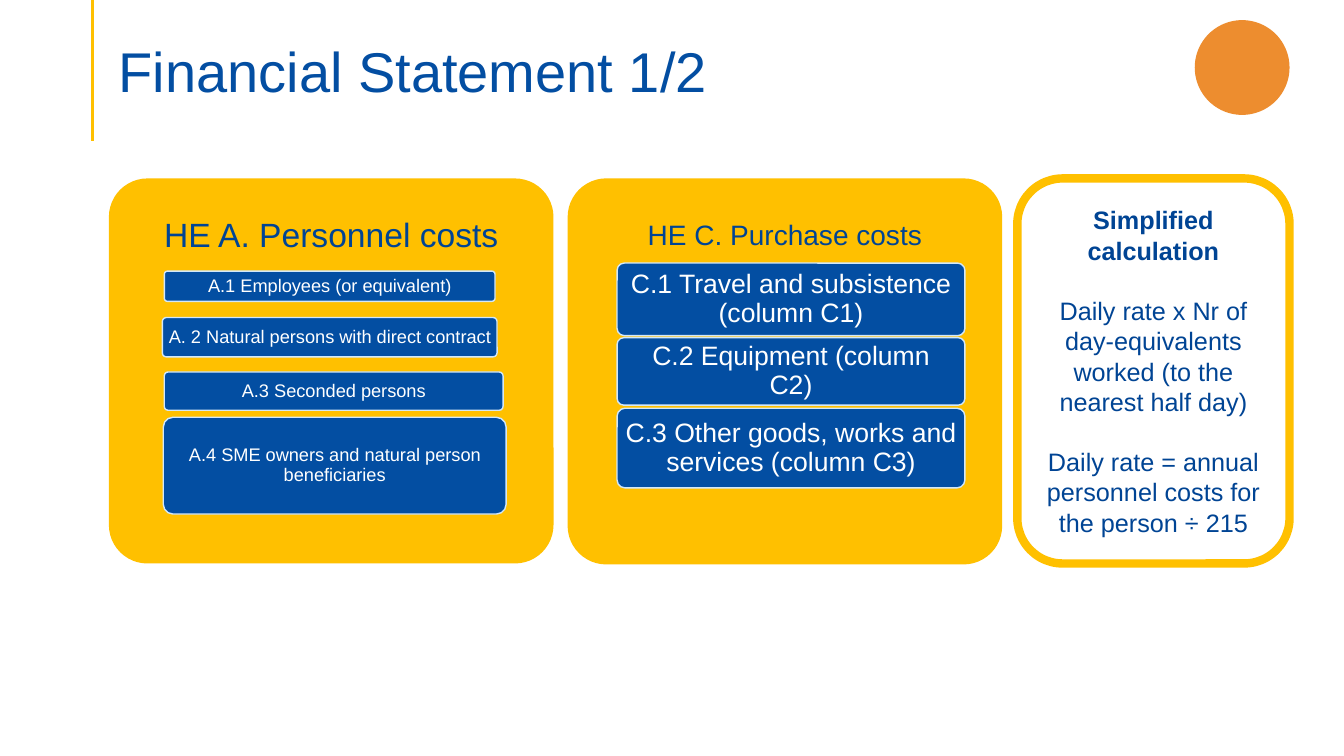
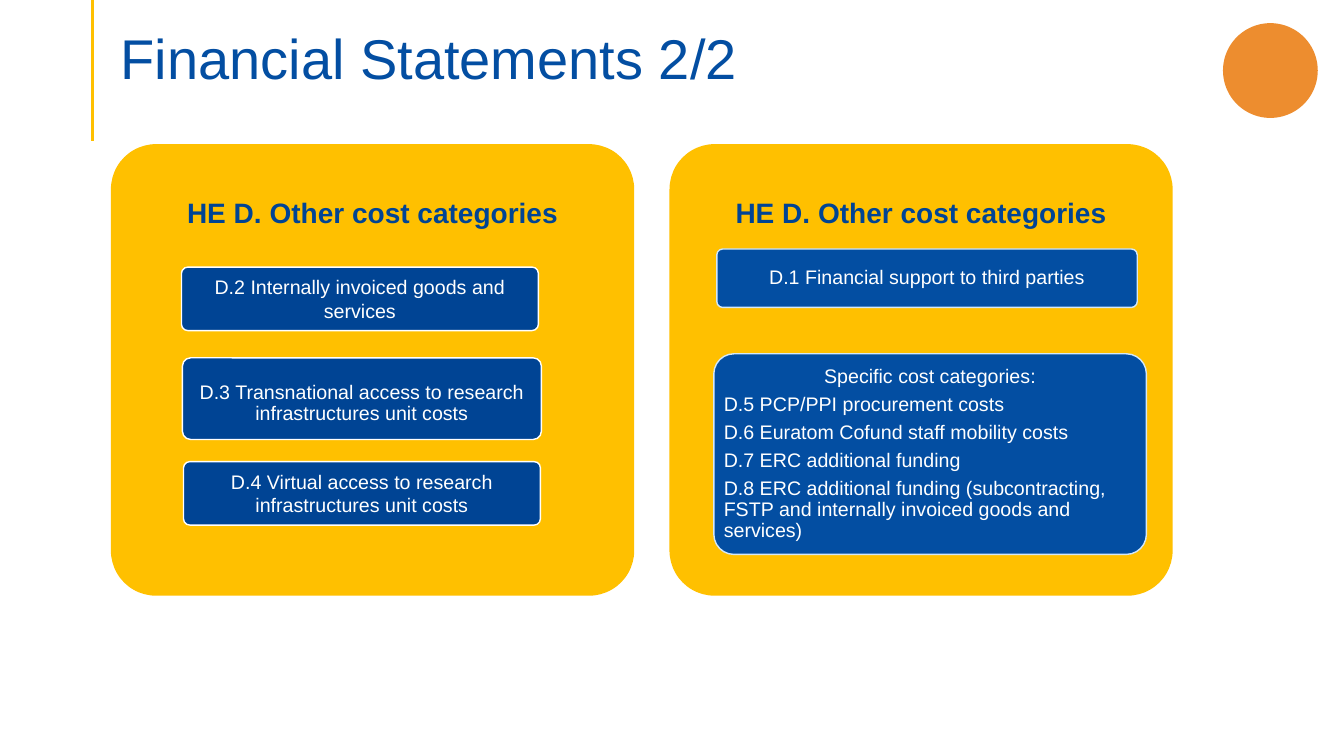
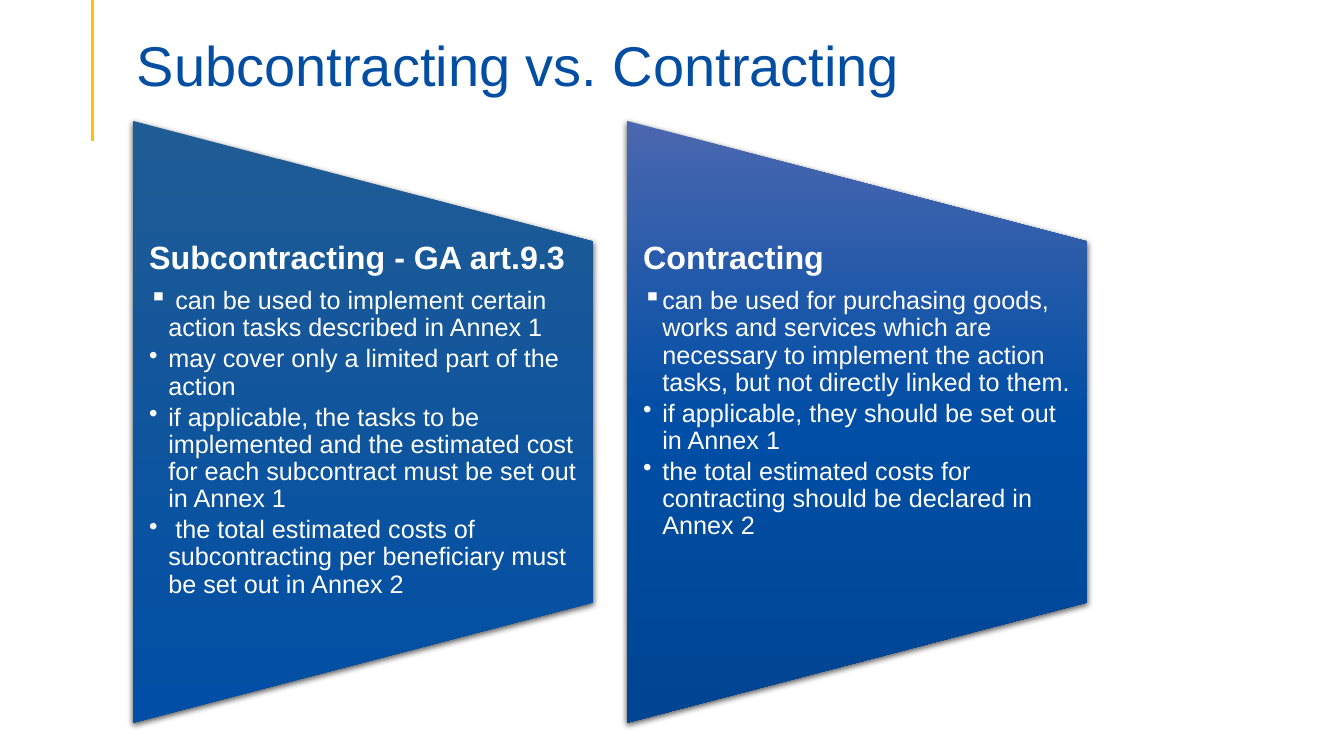
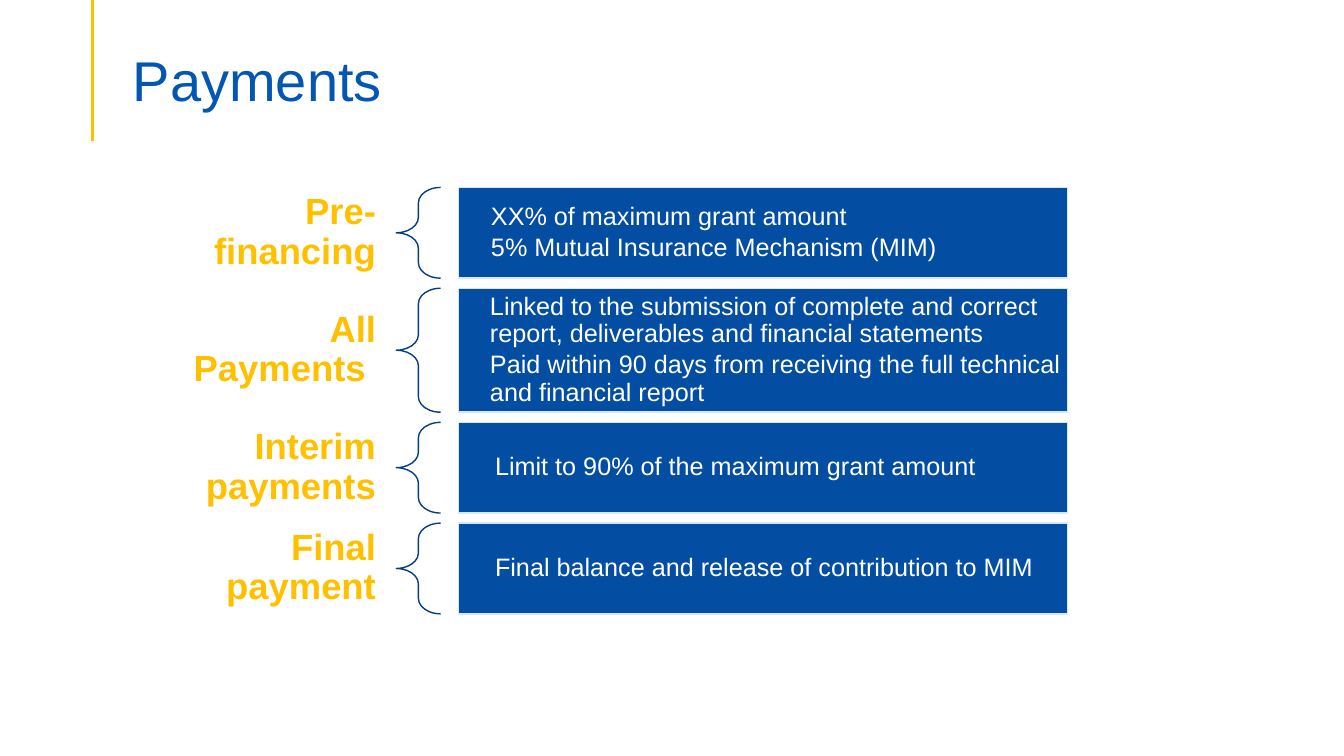
"""Build four slides on cost categories, subcontracting and payments."""
from lxml.etree import SubElement
from pptx import Presentation
from pptx.dml.color import RGBColor
from pptx.enum.shapes import MSO_CONNECTOR, MSO_SHAPE
from pptx.enum.text import MSO_ANCHOR, PP_ALIGN
from pptx.oxml.ns import qn
from pptx.util import Inches, Pt

BLUE = RGBColor(0x03, 0x4E, 0xA2)
DEEP_BLUE = RGBColor(0x00, 0x44, 0x94)
PAYMENT_BLUE = RGBColor(0x03, 0x56, 0xB1)
BRACE_BLUE = RGBColor(0x02, 0x3E, 0x82)
PALE_BLUE = RGBColor(0xD3, 0xE8, 0xF9)
STEEL = RGBColor(0x1F, 0x5C, 0x95)
PERIWINKLE = RGBColor(0x4B, 0x67, 0xAF)
MID_BLUE = RGBColor(0x00, 0x4E, 0xA5)
NIGHT_BLUE = RGBColor(0x00, 0x45, 0x93)
GOLD = RGBColor(0xFF, 0xC0, 0x00)
ORANGE = RGBColor(0xED, 0x8D, 0x2F)
WHITE = RGBColor(0xFF, 0xFF, 0xFF)
BLACK = RGBColor(0, 0, 0)


def write(frame, paragraphs, anchor=MSO_ANCHOR.MIDDLE, margins=(0.1, 0.05, 0.1, 0.05), **shared):
    frame.word_wrap = True
    frame.vertical_anchor = anchor
    frame.margin_left, frame.margin_top, frame.margin_right, frame.margin_bottom = map(Inches, margins)
    for index, entry in enumerate(paragraphs):
        text, own = (entry, {}) if isinstance(entry, str) else entry
        look = {"size": 18, "color": WHITE, "bold": False, "align": PP_ALIGN.LEFT, "spacing": 0.9,
                "before": 0, "after": 0, "indent": 0, "bullet": None, **shared, **own}
        paragraph = frame.add_paragraph() if index else frame.paragraphs[0]
        properties = paragraph._p.get_or_add_pPr()
        if look["indent"]:
            properties.set("marL", str(Inches(look["indent"])))
        if look["bullet"]:
            properties.set("indent", str(-Inches(look["indent"])))
            SubElement(properties, qn("a:buChar"), char=look["bullet"])
        paragraph.alignment = look["align"]
        paragraph.line_spacing = look["spacing"]
        paragraph.space_before = Pt(look["before"] if index else 0)
        paragraph.space_after = Pt(look["after"])
        run = paragraph.add_run()
        run.text = text
        run.font.name = "Arial"
        run.font.size = Pt(look["size"])
        run.font.bold = look["bold"]
        run.font.color.rgb = look["color"]


class Deck:
    def __init__(self):
        self.presentation = Presentation()
        self.presentation.slide_width = Inches(13.33)
        self.presentation.slide_height = Inches(7.5)
        self.slide = None

    def start(self, title, at, color=BLUE, anchor=MSO_ANCHOR.MIDDLE):
        self.slide = self.presentation.slides.add_slide(self.presentation.slide_layouts[6])
        accent = self.slide.shapes.add_connector(
            MSO_CONNECTOR.STRAIGHT, Inches(0.92), 0, Inches(0.92), Inches(1.4))
        accent.line.color.rgb = GOLD
        accent.line.width = Pt(2.25)
        SubElement(accent._element.spPr, qn("a:effectLst"))
        self.text(at, [title], size=40, color=color, anchor=anchor, margins=(0.1, 0.05, 0.1, 0))

    def text(self, at, paragraphs, **look):
        write(self.slide.shapes.add_textbox(*map(Inches, at)).text_frame, paragraphs, **look)

    def shape(self, kind, at, fill=None, line=None, width=1, adjust=None):
        shape = self.slide.shapes.add_shape(kind, *map(Inches, at))
        shape.shadow.inherit = False
        if fill is None:
            shape.fill.background()
        else:
            shape.fill.solid()
            shape.fill.fore_color.rgb = fill
        if line is None:
            shape.line.fill.background()
        else:
            shape.line.color.rgb = line
            shape.line.width = Pt(width)
        if adjust is not None:
            shape.adjustments[0] = adjust
        return shape

    def emblem(self, left, top):
        self.shape(MSO_SHAPE.OVAL, (left, top, 0.94, 0.94), ORANGE)

    def panel(self, at, heading, heading_height, **look):
        self.shape(MSO_SHAPE.ROUNDED_RECTANGLE, at, GOLD, adjust=0.1)
        left, top, width, _ = at
        self.text((left, top, width, heading_height), [heading],
                  color=DEEP_BLUE, align=PP_ALIGN.CENTER, **look)

    def card(self, at, paragraphs, fill=BLUE, line=PALE_BLUE, **look):
        card = self.shape(MSO_SHAPE.ROUNDED_RECTANGLE, at, fill, line, adjust=0.1)
        look = {"margins": (0.04, 0.03, 0.04, 0.03), "align": PP_ALIGN.CENTER, **look}
        write(card.text_frame, paragraphs, **look)

    def callout(self, at, paragraphs, **look):
        callout = self.shape(MSO_SHAPE.ROUNDED_RECTANGLE, at, WHITE, GOLD, 6)
        write(callout.text_frame, paragraphs, align=PP_ALIGN.CENTER, color=DEEP_BLUE, **look)

    def trapezoid(self, left, stops, heading, points):
        top, width, height = 1.2, 4.56, 5.97
        turned = (left + (width - height) / 2, top + (height - width) / 2, height, width)
        trapezoid = self.shape(MSO_SHAPE.FLOWCHART_MANUAL_OPERATION, turned, BLUE)
        trapezoid.rotation = 270
        properties = trapezoid._element.spPr
        solid = properties.find(qn("a:solidFill"))
        gradient = SubElement(properties, qn("a:gradFill"), rotWithShape="0")
        stop_list = SubElement(gradient, qn("a:gsLst"))
        for position, color in stops:
            stop = SubElement(stop_list, qn("a:gs"), pos=str(position * 1000))
            SubElement(stop, qn("a:srgbClr"), val=str(color))
        SubElement(gradient, qn("a:lin"), ang="5400000", scaled="0")
        properties.replace(solid, gradient)
        shadow = SubElement(properties.find(qn("a:effectLst")), qn("a:outerShdw"), blurRad=str(Pt(4.5)),
                            dist=str(Pt(1.5)), dir="5400000", rotWithShape="0")
        shade = SubElement(shadow, qn("a:srgbClr"), val=str(BLACK))
        SubElement(shade, qn("a:alpha"), val="63000")
        bullets = [(point, {"bullet": "•" if index else "▪"}) for index, point in enumerate(points)]
        title = (heading, {"size": 23, "bold": True, "after": 8, "indent": 0})
        self.text((left, 2.4, width, 3.58), [title, *bullets], anchor=MSO_ANCHOR.TOP,
                  margins=(0.16, 0, 0.16, 0), indent=0.19, after=2.7)

    def payment(self, top, height, label, details, indent):
        self.text((1.71, top, 2.22, height), [label], size=26, bold=True, color=GOLD,
                  align=PP_ALIGN.RIGHT, margins=(0.2, 0.07, 0.2, 0.07))
        self.shape(MSO_SHAPE.LEFT_BRACE, (3.93, top, 0.44, height), line=BRACE_BLUE, adjust=0.35)
        box = self.shape(MSO_SHAPE.RECTANGLE, (4.55, top, 6.04, height), BLUE, PALE_BLUE)
        write(box.text_frame, details, margins=(0.07,) * 4, indent=indent, after=2.7)


def personnel_and_purchases(deck):
    deck.start("Financial Statement 1/2", (1.08, 0.07, 11.5, 0.97), anchor=MSO_ANCHOR.BOTTOM)
    deck.emblem(11.85, 0.2)
    deck.callout((10.09, 1.77, 2.7, 3.82), [
        ("Simplified calculation", {"bold": True}),
        "Daily rate x Nr of day-equivalents worked (to the nearest half day)",
        "Daily rate = annual personnel costs for the person ÷ 215",
    ], spacing=1.0, before=21.5)
    deck.panel((1.08, 1.77, 4.41, 3.82), "HE A. Personnel costs", 1.15, size=24)
    for at, personnel in (
        ((1.63, 2.69, 3.28, 0.3), "A.1 Employees (or equivalent)"),
        ((1.61, 3.15, 3.32, 0.39), "A. 2 Natural persons with direct contract"),
        ((1.63, 3.69, 3.36, 0.38), "A.3 Seconded persons"),
        ((1.62, 4.14, 3.4, 0.96), "A.4 SME owners and natural person beneficiaries"),
    ):
        deck.card(at, [personnel], size=13)
    deck.panel((5.63, 1.77, 4.31, 3.83), "HE C. Purchase costs", 1.15, size=20)
    for top, height, side, purchase in (
        (2.61, 0.72, 0.05, "C.1 Travel and subsistence (column C1)"),
        (3.35, 0.67, 0.15, "C.2 Equipment (column C2)"),
        (4.05, 0.79, 0.05, "C.3 Other goods, works and services (column C3)"),
    ):
        deck.card((6.12, top, 3.45, height), [purchase], size=19, margins=(side, 0.04, side, 0.04))


def other_costs(deck):
    deck.start("Financial Statements 2/2", (1.1, 0.05, 11.5, 0.86), anchor=MSO_ANCHOR.BOTTOM)
    deck.emblem(12.13, 0.23)
    for left, width in ((1.1, 5.19), (6.64, 4.99)):
        deck.panel((left, 1.43, width, 4.48), "HE D. Other cost categories", 1.4, size=20, bold=True)
    for at, category, spacing, margins in (
        ((1.8, 2.65, 3.54, 0.63), "D.2 Internally invoiced goods and services", 1.0, (0.1, 0.05, 0.1, 0.05)),
        ((1.81, 3.55, 3.56, 0.81), "D.3 Transnational access to research infrastructures unit costs",
         0.9, (0.08, 0.13, 0.08, 0.03)),
        ((1.82, 4.58, 3.54, 0.63), "D.4 Virtual access to research infrastructures unit costs",
         1.0, (0.1, 0.05, 0.1, 0.05)),
    ):
        deck.card(at, [category], DEEP_BLUE, WHITE, size=14, spacing=spacing, margins=margins)
    deck.card((7.11, 2.47, 4.17, 0.58), ["D.1 Financial support to third parties"], size=14)
    deck.card((7.08, 3.51, 4.29, 1.99), [
        ("Specific cost categories:", {"align": PP_ALIGN.CENTER}),
        "D.5 PCP/PPI procurement costs",
        "D.6 Euratom Cofund staff mobility costs",
        "D.7 ERC additional funding",
        "D.8 ERC additional funding (subcontracting, FSTP and internally invoiced goods and services)",
    ], size=14, align=PP_ALIGN.LEFT, after=4.9)


def subcontracting(deck):
    deck.start("Subcontracting vs. Contracting", (1.26, 0.3, 9.22, 0.7))
    deck.trapezoid(1.32, ((0, STEEL), (100, MID_BLUE)), "Subcontracting - GA art.9.3", [
        " can be used to implement certain action tasks described in Annex 1",
        "may cover only a limited part of the action",
        "if applicable, the tasks to be implemented and the estimated cost for each subcontract "
        "must be set out in Annex 1",
        " the total estimated costs of subcontracting per beneficiary must be set out in Annex 2",
    ])
    deck.trapezoid(6.22, ((0, PERIWINKLE), (50, MID_BLUE), (100, NIGHT_BLUE)), "Contracting", [
        "can be used for purchasing goods, works and services which are necessary to implement "
        "the action tasks, but not directly linked to them.",
        "if applicable, they should be set out in Annex 1",
        "the total estimated costs for contracting should be declared in Annex 2",
    ])


def payments(deck):
    deck.start("Payments", (1.22, 0.47, 8.79, 0.66), PAYMENT_BLUE)
    top = 1.86
    for height, indent, label, details in (
        (0.9, 0.25, "Pre-financing", [
            "XX% of maximum grant amount", "5% Mutual Insurance Mechanism (MIM)"]),
        (1.23, 0.24, "All Payments ", [
            "Linked to the submission of complete and correct report, deliverables and financial statements",
            "Paid within 90 days from receiving the full technical and financial report"]),
        (0.9, 0.29, "Interim payments", ["Limit to 90% of the maximum grant amount"]),
        (0.9, 0.29, "Final payment", ["Final balance and release of contribution to MIM"]),
    ):
        deck.payment(top, height, label, details, indent)
        top += height + 0.1


def main():
    deck = Deck()
    for build in (personnel_and_purchases, other_costs, subcontracting, payments):
        build(deck)
    deck.presentation.save("out.pptx")


if __name__ == "__main__":
    main()
